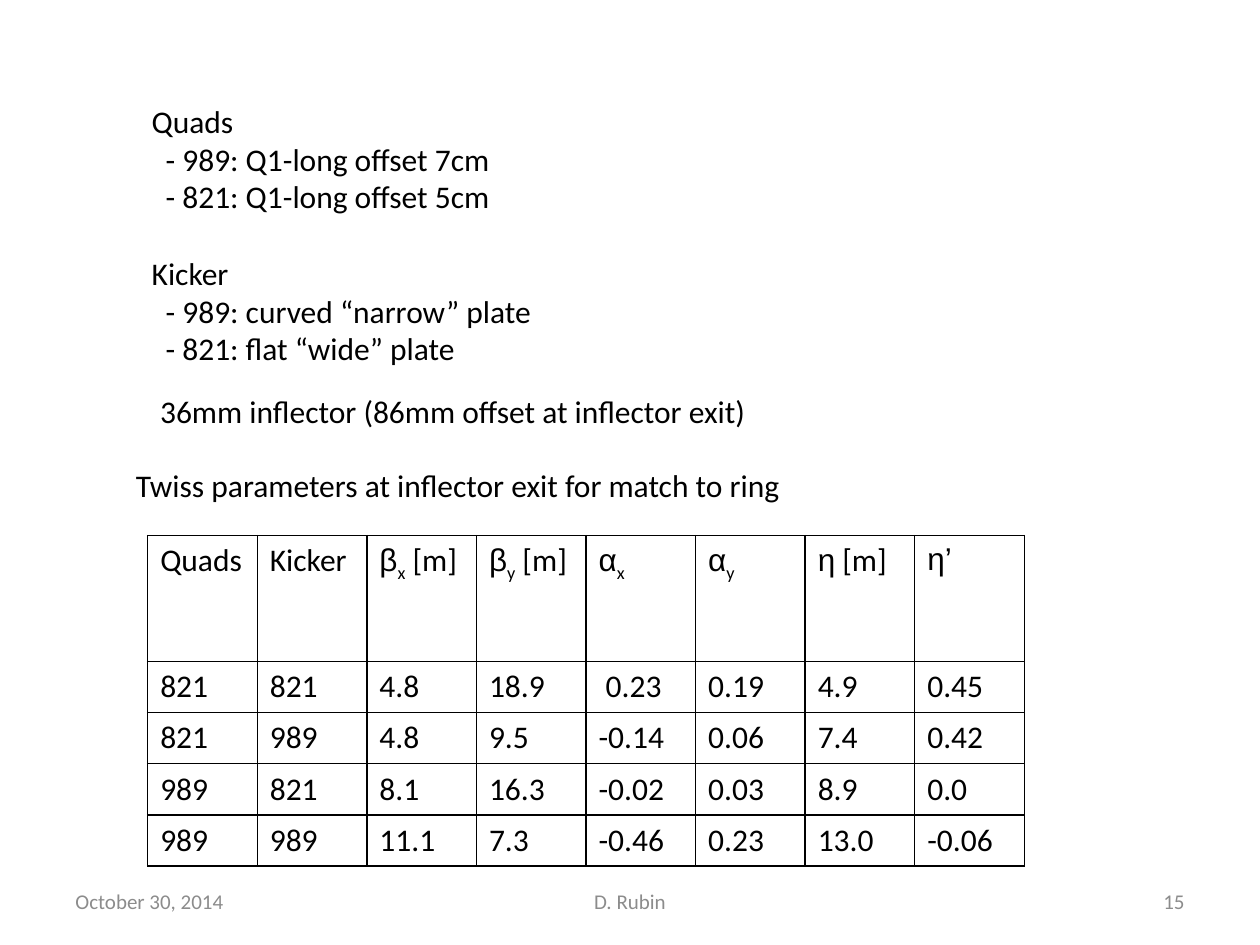
"""Builds the slide on quad and kicker settings with its table of Twiss parameters."""
from dataclasses import dataclass
from typing import Any

from lxml import etree
from pptx import Presentation
from pptx import util as u
from pptx.dml.color import RGBColor
from pptx.enum import text
from pptx.oxml import ns

COLORS = {"ink": "000000", "footer": "8C8C8C"}
BODY_SIZE, FOOTER_SIZE = 18, 12
BLANK_LINE = 22


@dataclass(frozen=True)
class Piece:
    words: str
    font: str = "Calibri"
    subscript: bool = False


@dataclass(frozen=True)
class Line:
    words: str
    indent: float = 0
    before: float = 0


@dataclass(frozen=True)
class Block:
    left: float
    top: float
    width: float
    height: float
    lines: tuple[Line, ...]


@dataclass(frozen=True)
class Footer:
    left: float
    width: float
    words: str
    align: text.PP_ALIGN


def apply_formats(target: Any, formats: dict[str, Any]) -> None:
    for attribute, value in formats.items():
        setattr(target, attribute, value)


def add_piece(paragraph: Any, piece: Piece, size: float, color: str) -> None:
    run = paragraph.add_run()
    run.text = piece.words
    apply_formats(run.font, {"name": piece.font, "size": u.Pt(size), "bold": False})
    run.font.color.rgb = RGBColor.from_string(COLORS[color])
    if piece.subscript:
        run._r.get_or_add_rPr().set("baseline", "-25000")


def add_block(slide: Any, block: Block) -> None:
    box = slide.shapes.add_textbox(*map(u.Pt, (block.left, block.top, block.width, block.height)))
    frame = box.text_frame
    apply_formats(frame, {"word_wrap": False, "auto_size": text.MSO_AUTO_SIZE.SHAPE_TO_FIT_TEXT})
    for index, line in enumerate(block.lines):
        paragraph = frame.add_paragraph() if index else frame.paragraphs[0]
        paragraph.space_before = u.Pt(line.before)
        paragraph._p.get_or_add_pPr().set("marL", str(u.Pt(line.indent)))
        add_piece(paragraph, Piece(line.words), BODY_SIZE, "ink")


def add_footer(slide: Any, footer: Footer) -> None:
    box = slide.shapes.add_textbox(*map(u.Pt, (footer.left, 500.5, footer.width, 28.75)))
    frame = box.text_frame
    apply_formats(frame, {"word_wrap": True, "vertical_anchor": text.MSO_ANCHOR.MIDDLE})
    frame.paragraphs[0].alignment = footer.align
    add_piece(frame.paragraphs[0], Piece(footer.words), FOOTER_SIZE, "footer")


def add_borders(cell: Any) -> None:
    properties = cell._tc.get_or_add_tcPr()
    for position, side in enumerate(("lnL", "lnR", "lnT", "lnB")):
        border = etree.Element(ns.qn(f"a:{side}"), w=str(u.Pt(1)))
        fill = etree.SubElement(border, ns.qn("a:solidFill"))
        etree.SubElement(fill, ns.qn("a:srgbClr"), val=COLORS["ink"])
        properties.insert(position, border)


def add_twiss_table(slide: Any, rows: list[list[tuple[Piece, ...]]]) -> None:
    column_width, header_height, row_height = 62.64, 72, 29.2
    columns = len(rows[0])
    height = header_height + row_height * (len(rows) - 1)
    frame = slide.shapes.add_table(
        len(rows), columns, u.Pt(84.4), u.Pt(306), u.Pt(column_width * columns), u.Pt(height))
    table = frame.table
    apply_formats(table, {"first_row": False, "horz_banding": False})
    for column in table.columns:
        column.width = u.Pt(column_width)
    for index, row in enumerate(rows):
        table.rows[index].height = u.Pt(row_height if index else header_height)
        for cell, pieces in zip(table.rows[index].cells, row):
            cell.fill.background()
            add_borders(cell)
            for piece in pieces:
                add_piece(cell.text_frame.paragraphs[0], piece, BODY_SIZE, "ink")


def greek(letter: str, index: str = "", unit: str = "") -> tuple[Piece, ...]:
    pieces = (Piece(letter, "Arial"), Piece(index, subscript=True), Piece(unit))
    return tuple(piece for piece in pieces if piece.words)


HEADER = [
    (Piece("Quads"),), (Piece("Kicker"),),
    greek("β", "x", " [m]"), greek("β", "y", " [m]"),
    greek("α", "x"), greek("α", "y"), greek("η", unit=" [m]"), greek("η’"),
]
VALUES = [
    ("821", "821", "4.8", "18.9", " 0.23", "0.19", "4.9", "0.45"),
    ("821", "989", "4.8", "9.5", "-0.14", "0.06", "7.4", "0.42"),
    ("989", "821", "8.1", "16.3", "-0.02", "0.03", "8.9", "0.0"),
    ("989", "989", "11.1", "7.3", "-0.46", "0.23", "13.0", "-0.06"),
]
FOOTERS = [
    Footer(36, 168, "October 30, 2014", text.PP_ALIGN.LEFT),
    Footer(246, 228, "D. Rubin", text.PP_ALIGN.CENTER),
    Footer(516, 168, "15", text.PP_ALIGN.RIGHT),
]
BLOCKS = [
    Block(84.4, 220.3, 353.5, 29, (Line("36mm inflector (86mm offset at inflector exit)"),)),
    Block(70.6, 262.8, 389.5, 29, (Line("Twiss parameters at inflector exit for match to ring"),)),
    Block(79.6, 54.7, 234, 160, (
        Line("Quads"),
        Line("- 989: Q1-long offset 7cm", indent=8),
        Line("- 821: Q1-long offset 5cm", indent=8),
        Line("Kicker", before=BLANK_LINE),
        Line("- 989: curved “narrow” plate", indent=8),
        Line("- 821: flat “wide” plate", indent=8),
    )),
]


def main() -> None:
    deck = Presentation()
    apply_formats(deck, {"slide_width": u.Pt(720), "slide_height": u.Pt(540)})
    slide = deck.slides.add_slide(deck.slide_layouts[6])
    for footer in FOOTERS:
        add_footer(slide, footer)
    add_twiss_table(slide, [HEADER] + [[(Piece(value),) for value in row] for row in VALUES])
    for block in BLOCKS:
        add_block(slide, block)
    deck.save("out.pptx")


if __name__ == "__main__":
    main()
